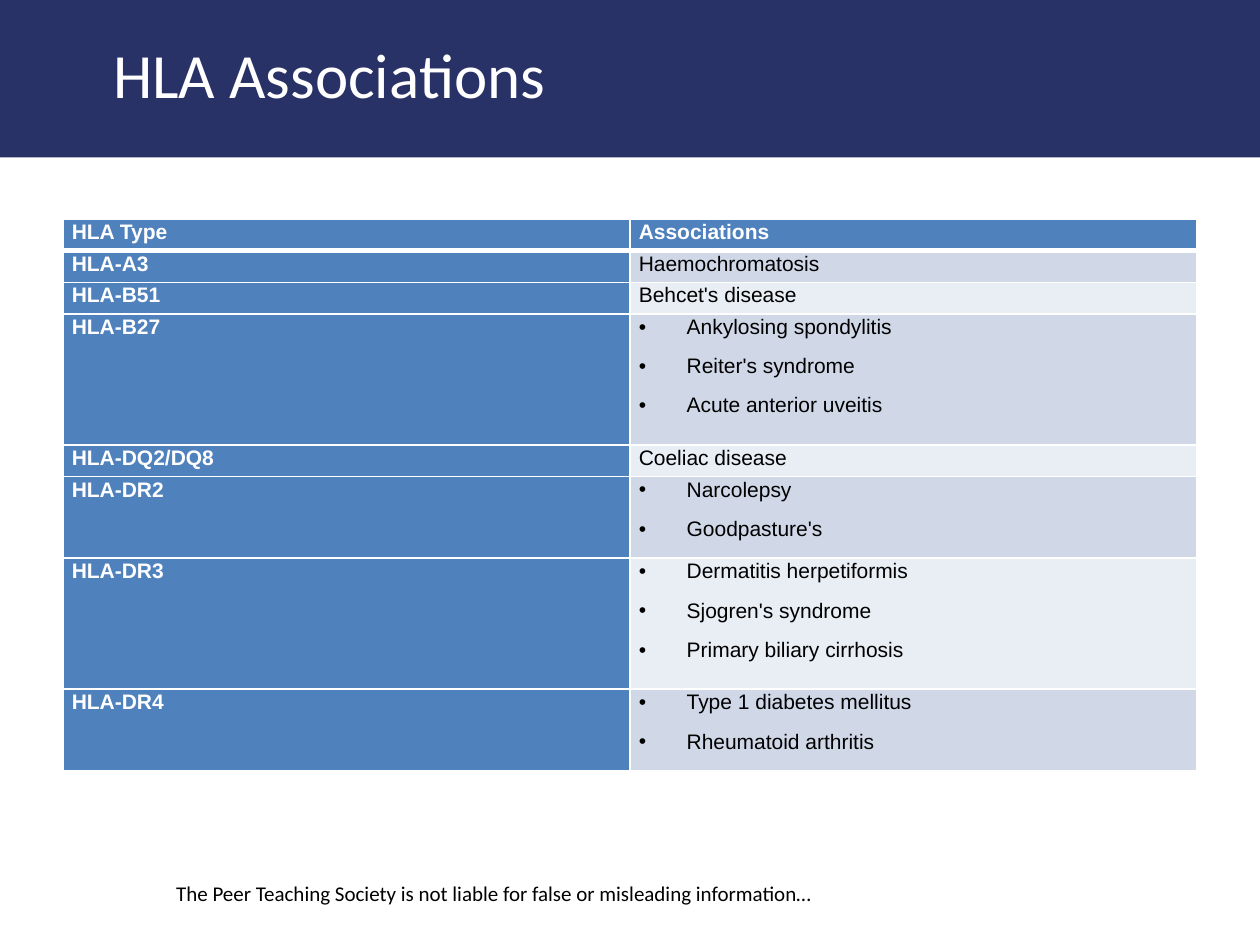
from dataclasses import dataclass

from lxml import etree
from pptx import Presentation
from pptx.dml.color import RGBColor
from pptx.enum.shapes import MSO_SHAPE
from pptx.enum.text import MSO_ANCHOR, PP_ALIGN
from pptx.oxml.ns import qn
from pptx.util import Inches, Pt

RECTANGLE = MSO_SHAPE.RECTANGLE
TOP = MSO_ANCHOR.TOP
LEFT, JUSTIFY = PP_ALIGN.LEFT, PP_ALIGN.JUSTIFY


@dataclass(frozen=True)
class Theme:
    """Colours, fonts and type sizes of the slide."""
    banner: str = "293267"
    accent: str = "4F81BD"
    bands: tuple = ("E9EDF4", "D0D8E8")
    white: str = "FFFFFF"
    black: str = "000000"
    heading_font: str = "Calibri"
    table_font: str = "Arial"
    title_size: int = 36
    body_size: int = 12


THEME = Theme()
HEADER = ("HLA Type", "Associations")
ASSOCIATIONS = [
    ("HLA-A3", ["Haemochromatosis"], 0.25),
    ("HLA-B51", ["Behcet's disease"], 0.25),
    ("HLA-B27", ["Ankylosing spondylitis", "Reiter's syndrome", "Acute anterior uveitis"], 1.04),
    ("HLA-DQ2/DQ8", ["Coeliac disease"], 0.25),
    ("HLA-DR2", ["Narcolepsy", "Goodpasture's"], 0.65),
    ("HLA-DR3", ["Dermatitis herpetiformis", "Sjogren's syndrome", "Primary biliary cirrhosis"], 1.04),
    ("HLA-DR4", ["Type 1 diabetes mellitus", "Rheumatoid arthritis"], 0.65),
]


def add_bullet(paragraph):
    """Give a paragraph a hanging bullet with a tab stop."""
    properties = paragraph._p.get_or_add_pPr()
    properties.set("marL", str(Inches(0.38)))
    properties.set("indent", str(-Inches(0.38)))
    etree.SubElement(properties, qn("a:buFont"), typeface="Arial")
    etree.SubElement(properties, qn("a:buChar"), char="•")
    tabs = etree.SubElement(properties, qn("a:tabLst"))
    etree.SubElement(tabs, qn("a:tab"), pos=str(Inches(0.5)), algn="l")


def write_text(paragraph, text, font=THEME.table_font, size=THEME.body_size, color=THEME.black,
               bold=False, align=LEFT, line_spacing=None, space_after=0, bullet=False):
    """Write formatted text into a paragraph."""
    if bullet:
        add_bullet(paragraph)
    paragraph.alignment = align
    paragraph.line_spacing = line_spacing
    paragraph.space_after = Pt(space_after)
    run = paragraph.add_run()
    run.text = text
    run.font.name = font
    run.font.size = Pt(size)
    run.font.bold = bold
    run.font.color.rgb = RGBColor.from_string(color)


def add_label(slide, text, left, top, width, height, **text_format):
    """Add a wrapping text box with one paragraph."""
    frame = slide.shapes.add_textbox(Inches(left), Inches(top), Inches(width), Inches(height)).text_frame
    frame.word_wrap = True
    write_text(frame.paragraphs[0], text, font=THEME.heading_font, **text_format)


def add_banner(slide, width, height):
    """Add the plain band behind the title."""
    banner = slide.shapes.add_shape(RECTANGLE, 0, 0, Inches(width), Inches(height))
    banner.shadow.inherit = False
    banner.fill.solid()
    banner.fill.fore_color.rgb = RGBColor.from_string(THEME.banner)
    banner.line.fill.background()


def set_borders(cell, top=1, bottom=1):
    """Draw white borders around a cell, with widths in points."""
    properties = cell._tc.get_or_add_tcPr()
    for side, width in (("L", 1), ("R", 1), ("T", top), ("B", bottom)):
        line = etree.SubElement(properties, qn(f"a:ln{side}"), w=str(Pt(width)))
        fill = etree.SubElement(line, qn("a:solidFill"))
        etree.SubElement(fill, qn("a:srgbClr"), val=THEME.white)


def fill_cell(cell, texts, fill, borders, **text_format):
    """Fill a cell with colour, borders and one paragraph per text."""
    set_borders(cell, **borders)
    cell.fill.solid()
    cell.fill.fore_color.rgb = RGBColor.from_string(fill)
    cell.margin_left = cell.margin_right = Inches(0.07)
    cell.margin_top = cell.margin_bottom = 0
    cell.vertical_anchor = TOP
    frame = cell.text_frame
    for index, text in enumerate(texts):
        paragraph = frame.add_paragraph() if index else frame.paragraphs[0]
        write_text(paragraph, text, line_spacing=1.07, **text_format)


def add_association_table(slide, left, top, width):
    """Add the table of HLA types and their associations."""
    header_height = 0.25
    height = header_height + sum(row[2] for row in ASSOCIATIONS)
    table = slide.shapes.add_table(len(ASSOCIATIONS) + 1, len(HEADER), Inches(left), Inches(top),
                                   Inches(width), Inches(height)).table
    heading = {"fill": THEME.accent, "color": THEME.white, "bold": True, "align": JUSTIFY}
    table.rows[0].height = Inches(header_height)
    for column, text in enumerate(HEADER):
        fill_cell(table.cell(0, column), [text], borders={"bottom": 3}, **heading)
    for row, (hla_type, diseases, row_height) in enumerate(ASSOCIATIONS, start=1):
        borders = {"top": 3 if row == 1 else 1}
        table.rows[row].height = Inches(row_height)
        fill_cell(table.cell(row, 0), [hla_type], borders=borders, **heading)
        fill_cell(table.cell(row, 1), diseases, THEME.bands[row % 2], borders,
                  space_after=8, bullet=len(diseases) > 1)


def main():
    """Build and save the slide."""
    presentation = Presentation()
    presentation.slide_width, presentation.slide_height = Inches(10), Inches(7.5)
    slide = presentation.slides.add_slide(presentation.slide_layouts[6])
    add_label(slide, "The Peer Teaching Society is not liable for false or misleading information…",
              1.3, 6.94, 5.54, 0.3)
    add_banner(slide, 10, 1.25)
    add_label(slide, "HLA Associations", 0.8, 0.23, 8.33, 0.71, size=THEME.title_size, color=THEME.white)
    add_association_table(slide, 0.5, 1.74, 9)
    presentation.save("out.pptx")


if __name__ == "__main__":
    main()
